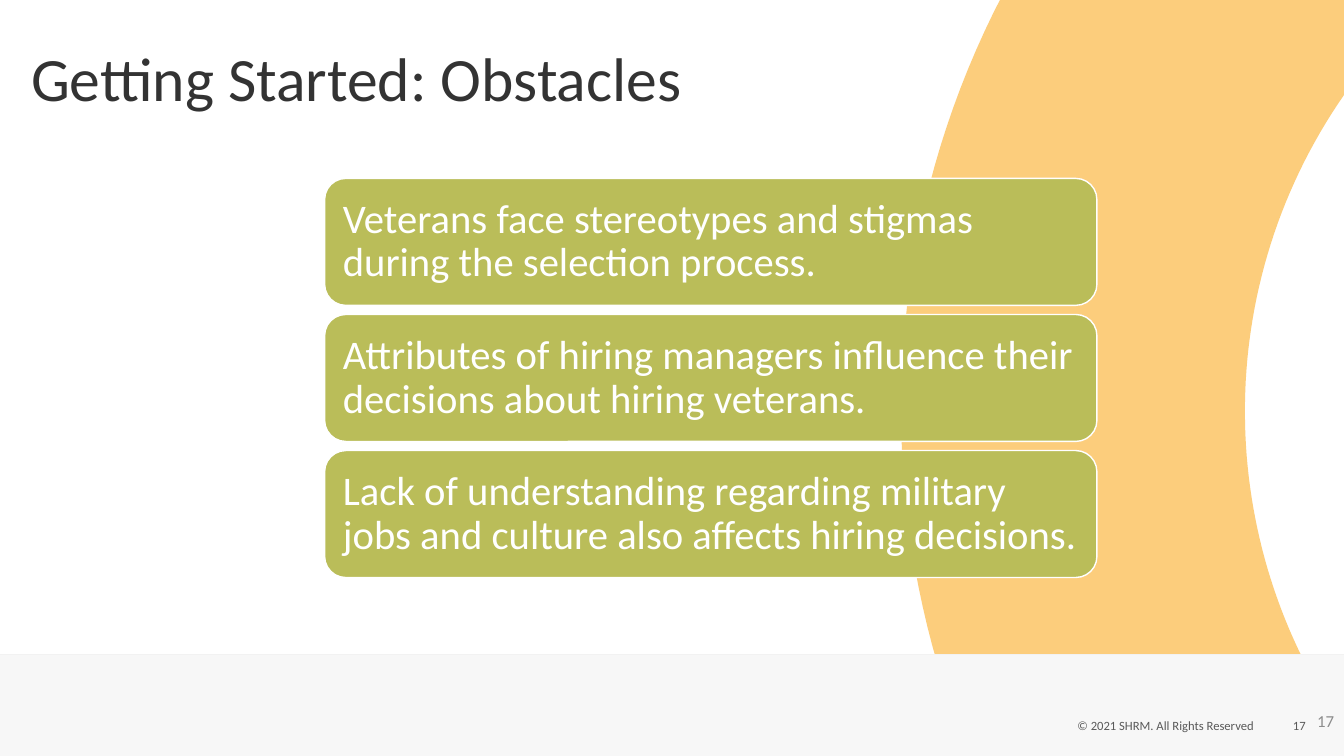
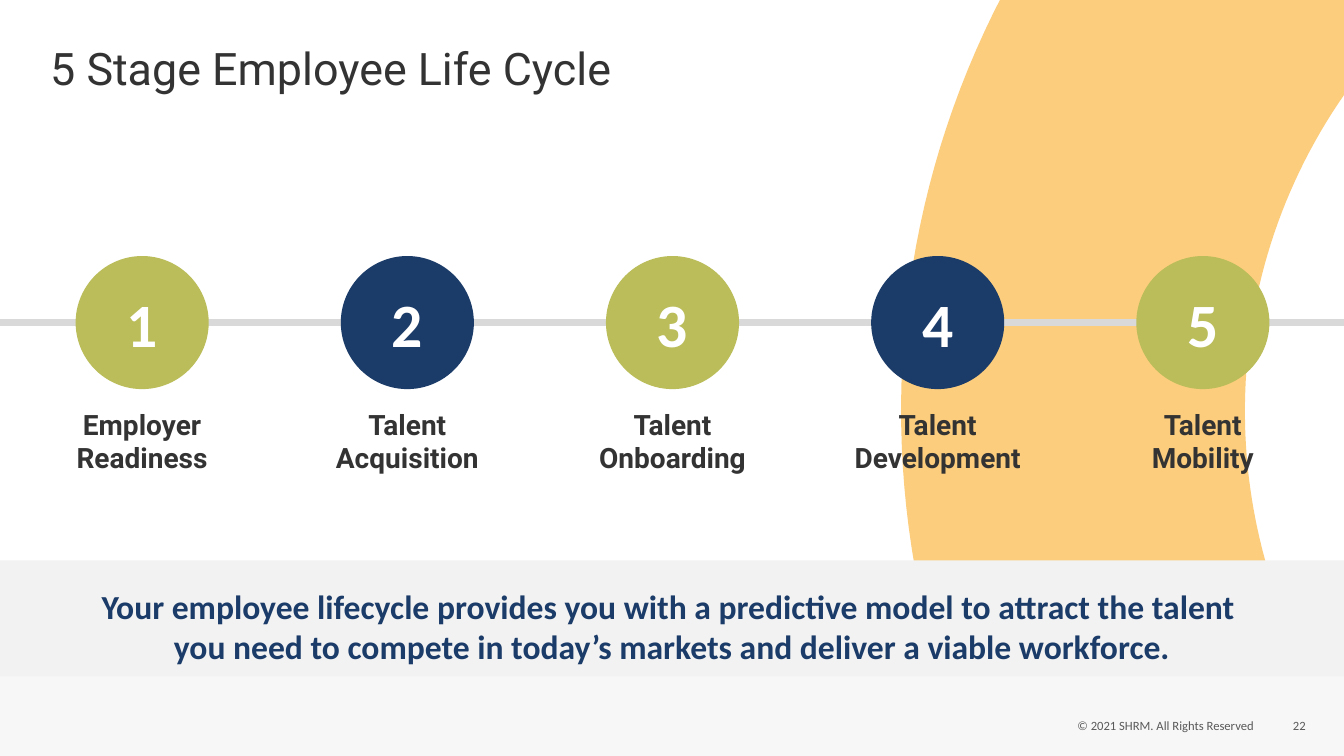
from pptx import Presentation
from pptx.dml.color import RGBColor
from pptx.enum.shapes import MSO_CONNECTOR, MSO_SHAPE
from pptx.enum.text import MSO_ANCHOR as Anchor, PP_ALIGN as Align
from pptx.oxml.ns import qn
from pptx.util import Inches, Pt
from lxml import etree

WHITE = RGBColor(0xFF, 0xFF, 0xFF)
AMBER = RGBColor(0xFC, 0xC5, 0x66)
OLIVE = RGBColor(0xBA, 0xBD, 0x59)
NAVY = RGBColor(0x1B, 0x3B, 0x68)
CHARCOAL = RGBColor(0x33, 0x33, 0x33)
FOOTER_TEXT = RGBColor(0x59, 0x59, 0x59)
NUMBER_TEXT = RGBColor(0x8C, 0x8C, 0x8C)
FOOTER_BAND = RGBColor(0xF7, 0xF7, 0xF7)
PALE_GRAY = RGBColor(0xF2, 0xF2, 0xF2)
LINE_GRAY = RGBColor(0xD9, 0xD9, 0xD9)

BODY_FONT = "Calibri"
ACCENT_FONT = "Roboto"
SLIDE_WIDTH, SLIDE_HEIGHT = 13.33, 7.5
FOOTER_TOP = 6.49
TEXT_BOX_INSETS = (0.1, 0.05)

# Each curve holds four Bézier points in inches.
ARC_OUTER = [(10.74, -1.31), (8.15, 2.12), (8.41, 6.83), (11.14, 9.95)]
ARC_INNER = [(13.08, 6.83), (12.01, 4.97), (12.09, 2.57), (13.47, 0.75)]
CURVE_STEPS = 60

OBSTACLES = [
    "Veterans face stereotypes and stigmas during the selection process.",
    "Attributes of hiring managers influence their decisions about hiring veterans.",
    "Lack of understanding regarding military jobs and culture also affects hiring decisions.",
]
STAGES = [
    "Employer Readiness",
    "Talent Acquisition",
    "Talent Onboarding",
    "Talent Development",
    "Talent Mobility",
]
LIFECYCLE_MESSAGE = [
    "Your employee lifecycle provides you with a predictive model to attract the talent ",
    "you need to compete in today’s markets and deliver a viable workforce.",
]


def write_text(shape, lines, size, color, font=BODY_FONT, bold=False, align=Align.LEFT,
               anchor=Anchor.MIDDLE, insets=(0, 0), spacing=1.0, wrap=True):
    """Write one paragraph, with a line break between the given lines."""
    frame = shape.text_frame
    frame.word_wrap = wrap
    frame.vertical_anchor = anchor
    frame.margin_left = frame.margin_right = Inches(insets[0])
    frame.margin_top = frame.margin_bottom = Inches(insets[1])
    paragraph = frame.paragraphs[0]
    paragraph.alignment = align
    paragraph.line_spacing = spacing
    for index, line in enumerate(lines):
        if index:
            paragraph.add_line_break()
        run = paragraph.add_run()
        run.text = line
        run.font.name = font
        run.font.size = Pt(size)
        run.font.bold = bold
        run.font.color.rgb = color


def add_text(slide, box, lines, size, color, **style):
    shape = slide.shapes.add_textbox(*map(Inches, box))
    write_text(shape, lines, size, color, **style)


def paint(shape, fill, line=None):
    shape.shadow.inherit = False
    shape.fill.solid()
    shape.fill.fore_color.rgb = fill
    if line is None:
        shape.line.fill.background()
    else:
        shape.line.color.rgb = line
        shape.line.width = Pt(1)


def add_block(slide, preset, box, fill, line=None):
    shape = slide.shapes.add_shape(preset, *map(Inches, box))
    paint(shape, fill, line)
    return shape


def add_rule(slide, y, color, width):
    """Draw a horizontal line across the whole slide."""
    rule = slide.shapes.add_connector(
        MSO_CONNECTOR.STRAIGHT, 0, Inches(y), Inches(SLIDE_WIDTH), Inches(y))
    rule.line.color.rgb = color
    rule.line.width = Pt(width)
    etree.SubElement(rule._element.spPr, qn("a:effectLst"))


def curve_points(controls):
    """Sample a cubic Bézier curve."""
    points = []
    for step in range(CURVE_STEPS + 1):
        t = step / CURVE_STEPS
        weights = ((1 - t) ** 3, 3 * t * (1 - t) ** 2, 3 * t ** 2 * (1 - t), t ** 3)
        points.append(tuple(sum(weight * point[axis] for weight, point in zip(weights, controls))
                            for axis in (0, 1)))
    return points


def add_arc(slide):
    outline = [(14.38, -0.18), (10.99, -1.61), *curve_points(ARC_OUTER),
               (11.65, 10.48), (13.15, 6.93), *curve_points(ARC_INNER), (14.16, 0)]
    points = [(Inches(x), Inches(y)) for x, y in outline]
    builder = slide.shapes.build_freeform(*points[0])
    builder.add_line_segments(points[1:], close=True)
    arc = builder.convert_to_shape()
    paint(arc, AMBER)
    color = arc._element.spPr.find(qn("a:solidFill"))[0]
    etree.SubElement(color, qn("a:alpha"), val="85000")


def add_framed_slide(presentation, number):
    """Add a slide with the arc and footer that all slides share."""
    slide = presentation.slides.add_slide(presentation.slide_layouts[6])
    add_arc(slide)
    add_block(slide, MSO_SHAPE.RECTANGLE,
              (0, FOOTER_TOP, SLIDE_WIDTH, SLIDE_HEIGHT - FOOTER_TOP), FOOTER_BAND)
    add_text(slide, (12.52, 6.89, 0.43, 0.62), [str(number)], 9, FOOTER_TEXT, align=Align.RIGHT)
    add_text(slide, (10.6, 6.97, 1.92, 0.46), ["© 2021 SHRM. All Rights Reserved"], 9,
             FOOTER_TEXT, align=Align.CENTER)
    add_rule(slide, FOOTER_TOP, PALE_GRAY, 0.5)
    return slide


def add_title(slide, box, title, size, font=BODY_FONT):
    add_text(slide, box, [title], size, CHARCOAL, font=font, insets=TEXT_BOX_INSETS, spacing=0.9)


def add_obstacle_cards(slide):
    top, height, pitch = 1.77, 1.26, 1.35
    for index, obstacle in enumerate(OBSTACLES):
        card = add_block(slide, MSO_SHAPE.ROUNDED_RECTANGLE,
                         (3.22, top + index * pitch, 7.66, height), OLIVE, WHITE)
        write_text(card, [obstacle], 29, WHITE, insets=(0.12, 0.12), spacing=0.9)


def add_stages(slide):
    first_center, pitch, line_y = 1.41, 2.63, 3.2
    diameter, label_width = 1.32, 1.7
    add_rule(slide, line_y, LINE_GRAY, 5)
    for index, stage in enumerate(STAGES):
        center = first_center + index * pitch
        circle = add_block(slide, MSO_SHAPE.OVAL,
                           (center - diameter / 2, line_y - diameter / 2, diameter, diameter),
                           NAVY if index % 2 else OLIVE)
        write_text(circle, [str(index + 1)], 44, WHITE, bold=True, align=Align.CENTER, wrap=False)
        add_text(slide, (center - label_width / 2, 4.04, label_width, 0.59), [stage], 20,
                 CHARCOAL, font=ACCENT_FONT, bold=True, align=Align.CENTER, anchor=Anchor.TOP)


def build_obstacles(presentation):
    number = 17
    slide = add_framed_slide(presentation, number)
    add_title(slide, (0.21, 0.08, 11.5, 1.45), "Getting Started: Obstacles", 44)
    add_obstacle_cards(slide)
    add_text(slide, (10.33, 6.95, 3, 0.4), [str(number)], 12, NUMBER_TEXT,
             align=Align.RIGHT, insets=TEXT_BOX_INSETS)


def build_life_cycle(presentation):
    slide = add_framed_slide(presentation, 22)
    add_title(slide, (0.4, 0.27, 6.47, 0.87), "5 Stage Employee Life Cycle", 32, ACCENT_FONT)
    add_block(slide, MSO_SHAPE.RECTANGLE, (0, 5.56, SLIDE_WIDTH, 1.15), PALE_GRAY)
    add_text(slide, (0.33, 5.76, 12.67, 0.91), LIFECYCLE_MESSAGE, 24, NAVY, bold=True,
             align=Align.CENTER, anchor=Anchor.TOP, insets=TEXT_BOX_INSETS)
    add_stages(slide)


def main():
    presentation = Presentation()
    presentation.slide_width = Inches(SLIDE_WIDTH)
    presentation.slide_height = Inches(SLIDE_HEIGHT)
    build_obstacles(presentation)
    build_life_cycle(presentation)
    presentation.save("out.pptx")


if __name__ == "__main__":
    main()
